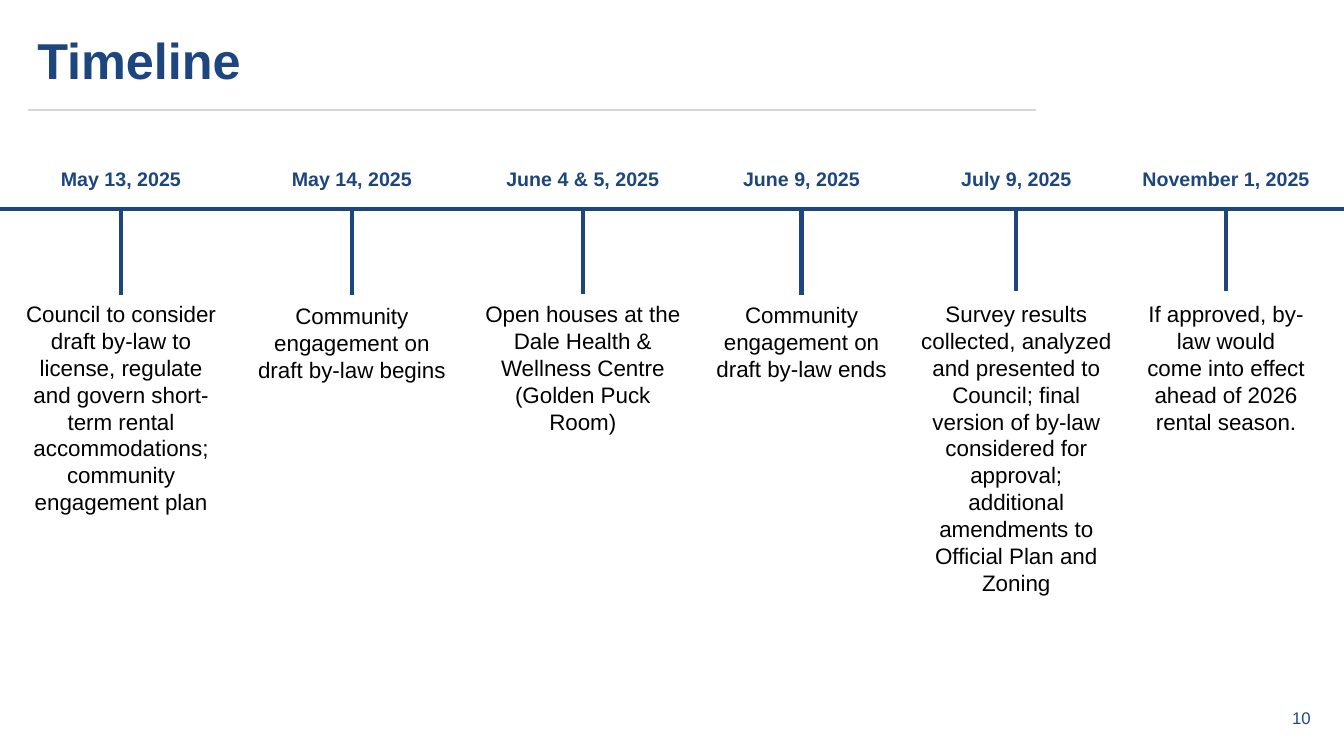
from dataclasses import dataclass
from typing import NamedTuple

from pptx import Presentation
from pptx.dml.color import RGBColor
from pptx.enum.shapes import MSO_CONNECTOR
from pptx.enum.text import MSO_ANCHOR as ANCHOR, MSO_AUTO_SIZE as AUTO, PP_ALIGN as ALIGN
from pptx.oxml.ns import qn
from pptx.util import Inches, Pt


@dataclass(frozen=True)
class Theme:
    font: str = "Arial"
    navy: str = "1D467F"
    black: str = "000000"
    grey: str = "D6D6D6"
    title_size: int = 36
    body_size: int = 16
    date_size: int = 14
    number_size: int = 12
    rule_width: int = 1
    axis_width: int = 3


class Milestone(NamedTuple):
    date: str
    text: str
    x: float
    tick_top: float
    text_top: float
    date_width: float
    text_width: float
    lines: int


SLIDE_W, SLIDE_H = 13.33, 7.5
AXIS_Y = 2.07
DATE_TOP, DATE_H = 1.61, 0.34
TICK_H = 0.84
LINE_H, INSETS = 0.27, 0.1

MILESTONES = [
    Milestone("May 13, 2025",
              "Council to consider draft by-law to license, regulate and govern "
              "short-term rental accommodations; community engagement plan",
              1.2, 2.09, 2.93, 1.4, 2.19, 8),
    Milestone("May 14, 2025", "Community engagement on draft by-law begins",
              3.49, 2.09, 2.95, 1.4, 2.14, 3),
    Milestone("June 4 & 5, 2025",
              "Open houses at the Dale Health & Wellness Centre (Golden Puck Room)",
              5.78, 2.08, 2.93, 1.72, 2.19, 5),
    Milestone("June 9, 2025", "Community engagement on draft by-law ends",
              7.95, 2.09, 2.94, 1.36, 1.91, 3),
    Milestone("July 9, 2025",
              "Survey results collected, analyzed and presented to Council; final "
              "version of by-law considered for approval; additional amendments to "
              "Official Plan and Zoning",
              10.08, 2.05, 2.93, 1.3, 2.1, 11),
    Milestone("November 1, 2025",
              "If approved, by-law would come into effect ahead of 2026 rental season.",
              12.16, 2.05, 2.93, 1.87, 1.77, 6),
]


class TimelineSlide:
    """Draws the elements of a timeline slide in one theme."""

    def __init__(self, slide, theme):
        self.slide = slide
        self.theme = theme

    def style(self, p, size, color, bold=False, align=ALIGN.LEFT):
        p.alignment = align
        for r in p.runs:
            r.font.name = self.theme.font
            r.font.size = Pt(size)
            r.font.bold = bold
            r.font.color.rgb = RGBColor.from_string(color)

    def title(self, text, left, top, width, height):
        sp = self.slide.shapes.title
        sp.left, sp.top, sp.width, sp.height = map(Inches, (left, top, width, height))
        tf = sp.text_frame
        tf.text = text
        tf.vertical_anchor = ANCHOR.BOTTOM
        tf.auto_size = AUTO.NONE
        p = tf.paragraphs[0]
        p.line_spacing = 0.9
        self.style(p, self.theme.title_size, self.theme.navy, bold=True)

    def line(self, shapes, x1, y1, x2, y2, color, width):
        cxn = shapes.add_connector(MSO_CONNECTOR.STRAIGHT, *map(Inches, (x1, y1, x2, y2)))
        cxn.line.color.rgb = RGBColor.from_string(color)
        cxn.line.width = Pt(width)
        sp_pr = cxn._element.spPr
        sp_pr.append(sp_pr.makeelement(qn("a:effectLst"), {}))

    def text(self, shapes, text, left, top, width, height, size, color,
             bold=False, align=ALIGN.CENTER, anchor=ANCHOR.TOP, wrap=True, auto=AUTO.NONE):
        sp = shapes.add_textbox(*map(Inches, (left, top, width, height)))
        tf = sp.text_frame
        tf.word_wrap = wrap
        tf.auto_size = auto
        tf.vertical_anchor = anchor
        tf.text = text
        self.style(tf.paragraphs[0], size, color, bold, align)

    def milestone(self, m):
        t = self.theme
        shapes = self.slide.shapes.add_group_shape().shapes
        self.line(shapes, m.x, m.tick_top, m.x, m.tick_top + TICK_H, t.navy, t.axis_width)
        self.text(shapes, m.date, m.x - m.date_width / 2, DATE_TOP, m.date_width, DATE_H,
                  t.date_size, t.navy, bold=True, wrap=False, auto=AUTO.SHAPE_TO_FIT_TEXT)
        self.text(shapes, m.text, m.x - m.text_width / 2, m.text_top, m.text_width,
                  m.lines * LINE_H + INSETS, t.body_size, t.black,
                  auto=AUTO.SHAPE_TO_FIT_TEXT)


def main():
    prs = Presentation()
    prs.slide_width, prs.slide_height = Inches(SLIDE_W), Inches(SLIDE_H)
    s = prs.slides.add_slide(prs.slide_layouts[5])
    theme = Theme()
    timeline = TimelineSlide(s, theme)

    timeline.line(s.shapes, 0.28, 1.09, 10.28, 1.09, theme.grey, theme.rule_width)
    timeline.text(s.shapes, "10", 10.1, 6.92, 3, 0.4, theme.number_size, theme.navy,
                  align=ALIGN.RIGHT, anchor=ANCHOR.MIDDLE)
    timeline.title("Timeline", 0.27, 0.2, 12.83, 0.75)
    timeline.line(s.shapes, 0, AXIS_Y, SLIDE_W, AXIS_Y, theme.navy, theme.axis_width)
    for m in MILESTONES:
        timeline.milestone(m)

    prs.save("out.pptx")


if __name__ == "__main__":
    main()
